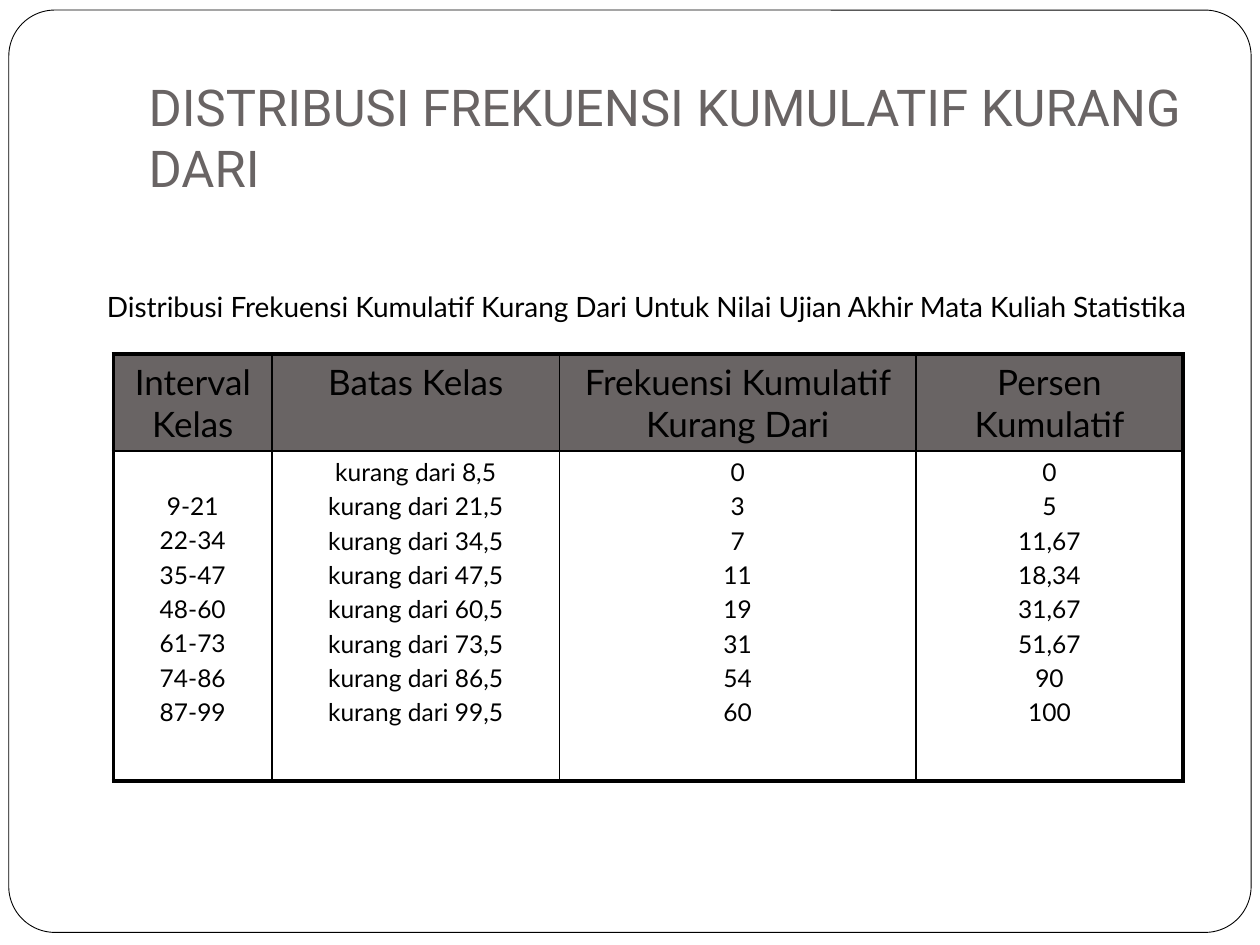
from dataclasses import dataclass

from lxml.etree import SubElement
from pptx import Presentation
from pptx.dml.color import RGBColor as Rgb
from pptx.enum.shapes import MSO_SHAPE as Shape
from pptx.enum.text import MSO_ANCHOR as Anchor, MSO_AUTO_SIZE as Fit, PP_ALIGN as Align
from pptx.oxml.ns import qn
from pptx.util import Inches, Pt


@dataclass(frozen=True)
class Theme:
    ink: str = "000000"
    gray: str = "696464"
    paper: str = "FFFFFF"
    title_font: str = "Roboto"
    body_font: str = "Lato"
    title_size: int = 29
    head_size: int = 20
    note_size: int = 16
    cell_size: int = 14
    thick: float = 2.25
    thin: float = 1
    hair: float = 0.5
    gap: float = 0.2  # space before a paragraph, as a share of its type size


HEADS = ["Interval Kelas", "Batas Kelas", "Frekuensi Kumulatif Kurang Dari", "Persen Kumulatif"]
LIMITS = [8.5 + 13 * step for step in range(8)]
COLUMNS = [
    [f"{low + 0.5:.0f}-{high - 0.5:.0f}" for low, high in zip(LIMITS, LIMITS[1:])],
    [f"kurang dari {limit}".replace(".", ",") for limit in LIMITS],
    ["0", "3", "7", "11", "19", "31", "54", "60"],
    ["0", "5", "11,67", "18,34", "31,67", "51,67", "90", "100"],
]
WIDTHS = [1.26, 2.28, 2.83, 2.12]
HEIGHTS = [0.77, 2.29, 0.33]
OPEN = 2  # the column whose last two cells stay unmerged


class Deck:
    def __init__(self, theme):
        self.theme = theme
        self.file = Presentation()
        self.file.slide_width, self.file.slide_height = Inches(10), Inches(7.5)
        self.slide = self.file.slides.add_slide(self.file.slide_layouts[5])

    def style(self, frame, font, size, color, align=Align.LEFT, gap=0):
        for para in frame.paragraphs:
            para.alignment = align
            para.space_before = Pt(size * gap)
            for run in para.runs:
                run.font.name, run.font.size = font, Pt(size)
                run.font.color.rgb = Rgb.from_string(color)

    def title(self, text, *box):
        shape = self.slide.shapes.title
        shape.left, shape.top, shape.width, shape.height = map(Inches, box)
        frame = shape.text_frame
        frame.text = text
        frame.word_wrap, frame.auto_size = True, Fit.NONE
        frame.vertical_anchor = Anchor.BOTTOM
        frame.margin_bottom = Inches(0.1)
        self.style(frame, self.theme.title_font, self.theme.title_size, self.theme.gray)

    def border(self, *box):
        """Draw the rounded page border behind the title."""
        shape = self.slide.shapes.add_shape(Shape.ROUNDED_RECTANGLE, *map(Inches, box))
        shape.adjustments[0] = 0.05
        shape.shadow.inherit = False
        shape.fill.solid()
        shape.fill.fore_color.rgb = Rgb.from_string(self.theme.paper)
        shape.line.color.rgb = Rgb.from_string(self.theme.ink)
        shape.line.width = Pt(self.theme.hair)
        self.slide.shapes.title.element.addprevious(shape.element)

    def note(self, text, *box):
        frame = self.slide.shapes.add_textbox(*map(Inches, box)).text_frame
        frame.text = text
        frame.word_wrap, frame.auto_size = False, Fit.SHAPE_TO_FIT_TEXT
        self.style(frame, self.theme.body_font, self.theme.note_size, self.theme.ink)

    def edges(self, cell, **widths):
        """Set cell borders in the order L, R, T, B; a width of 0 hides one."""
        props = cell._tc.get_or_add_tcPr()
        for place, (side, width) in enumerate(widths.items()):
            line = SubElement(props, qn(f"a:ln{side}"), w=str(Pt(width)))
            if width:
                fill = SubElement(line, qn("a:solidFill"))
                SubElement(fill, qn("a:srgbClr"), val=self.theme.ink)
            else:
                SubElement(line, qn("a:noFill"))
            props.insert(place, line)

    def cell(self, cell, text, size, fill=None):
        cell.text = text
        self.style(cell.text_frame, self.theme.body_font, size, self.theme.ink,
                   Align.CENTER, self.theme.gap)
        if fill:
            cell.fill.solid()
            cell.fill.fore_color.rgb = Rgb.from_string(fill)
        else:
            cell.fill.background()

    def table(self, left, top):
        theme = self.theme
        box = map(Inches, (left, top, sum(WIDTHS), sum(HEIGHTS)))
        grid = self.slide.shapes.add_table(len(HEIGHTS), len(WIDTHS), *box).table
        grid.first_row = grid.horz_banding = False
        for row, height in zip(grid.rows, HEIGHTS):
            row.height = Inches(height)
        for col, width in enumerate(WIDTHS):
            grid.columns[col].width = Inches(width)
            head, body, foot = (grid.cell(row, col) for row in range(3))
            self.cell(head, HEADS[col], theme.head_size, theme.gray)
            self.cell(body, "\n".join(COLUMNS[col]), theme.cell_size)
            foot.fill.background()
            foot.margin_top = foot.margin_bottom = 0
            sides = {"L": theme.thin if col else theme.thick,
                     "R": theme.thin if col < len(WIDTHS) - 1 else theme.thick}
            self.edges(head, **sides, T=theme.thick, B=theme.thin)
            self.edges(body, **sides, T=theme.thin, B=0 if col == OPEN else theme.thick)
            self.edges(foot, **sides, T=0, B=theme.thick)
            if col != OPEN:
                body.merge(foot)
        # The intervals start one line lower than the other columns.
        grid.cell(1, 0).margin_top = Inches(0.32)


def main():
    deck = Deck(Theme())
    deck.border(0.07, 0.08, 9.86, 7.32)
    deck.title("DISTRIBUSI FREKUENSI KUMULATIF KURANG DARI", 1.08, 0.42, 8.52, 1.25)
    deck.table(0.9, 2.81)
    deck.note("Distribusi Frekuensi Kumulatif Kurang Dari Untuk Nilai Ujian Akhir "
              "Mata Kuliah Statistika", 0.75, 2.25, 8.78, 0.37)
    deck.file.save("out.pptx")


if __name__ == "__main__":
    main()
